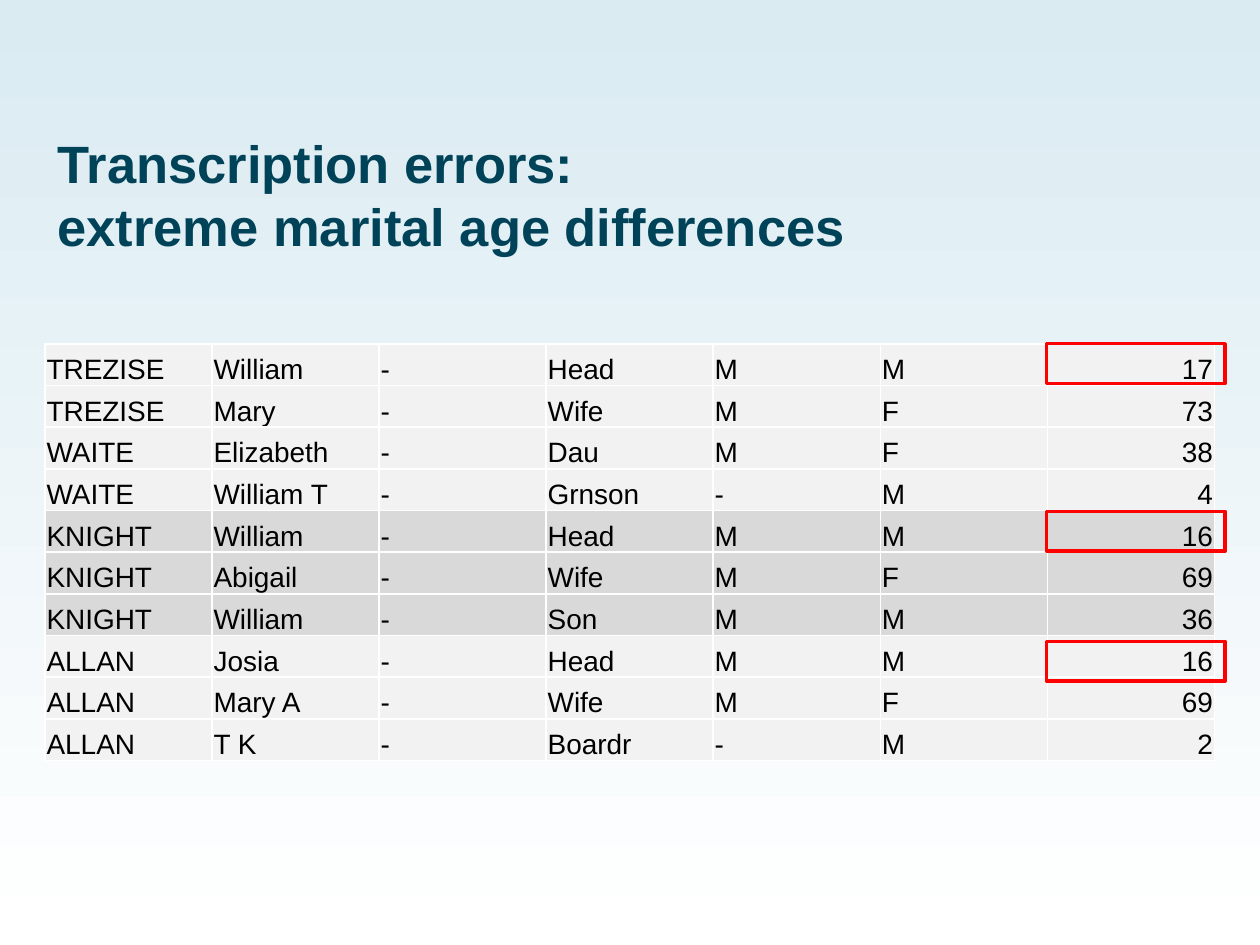
"""Build a slide listing transcription errors behind extreme marital age differences."""
from lxml.etree import fromstring
from pptx import Presentation
from pptx.dml.color import RGBColor
from pptx.enum.shapes import MSO_SHAPE
from pptx.enum.text import MSO_ANCHOR, PP_ALIGN
from pptx.oxml.ns import nsdecls
from pptx.util import Cm, Pt

TITLE = "Transcription errors:\nextreme marital age differences"
PEOPLE = [
    ("TREZISE", "William", "-", "Head", "M", "M", "17"),
    ("TREZISE", "Mary", "-", "Wife", "M", "F", "73"),
    ("WAITE", "Elizabeth", "-", "Dau", "M", "F", "38"),
    ("WAITE", "William T", "-", "Grnson", "-", "M", "4"),
    ("KNIGHT", "William", "-", "Head", "M", "M", "16"),
    ("KNIGHT", "Abigail", "-", "Wife", "M", "F", "69"),
    ("KNIGHT", "William", "-", "Son", "M", "M", "36"),
    ("ALLAN", "Josia", "-", "Head", "M", "M", "16"),
    ("ALLAN", "Mary A", "-", "Wife", "M", "F", "69"),
    ("ALLAN", "T K", "-", "Boardr", "-", "M", "2"),
]
SHADED_FAMILY = "KNIGHT"
SUSPECT_AGE_TOPS = [6.93, 10.31, 12.93]

PALE_BLUE = RGBColor(0xDA, 0xEB, 0xF2)
WHITE = RGBColor(0xFF, 0xFF, 0xFF)
TEAL = RGBColor(0x00, 0x43, 0x59)
BLACK = RGBColor(0x00, 0x00, 0x00)
LIGHT_GREY = RGBColor(0xF2, 0xF2, 0xF2)
MID_GREY = RGBColor(0xD9, 0xD9, 0xD9)
RED = RGBColor(0xFF, 0x00, 0x00)

LEFT, WIDTH = 0.91, 23.57
TABLE_TOP, ROW_HEIGHT = 6.93, 0.84
TITLE_FONT = {"name": "Arial", "size": Pt(30), "bold": True}
CELL_FONT = {"name": "Arial", "size": Pt(16), "bold": False}
CELL_FORMAT = {
    "margin_left": Cm(0.03),
    "margin_right": Cm(0.03),
    "margin_top": Cm(0.03),
    "margin_bottom": 0,
    "vertical_anchor": MSO_ANCHOR.BOTTOM,
}


def apply(target, values):
    for name, value in values.items():
        setattr(target, name, value)


def style_text(paragraph, font_values, color):
    for run in paragraph.runs:
        apply(run.font, font_values)
        run.font.color.rgb = color


def add_borders(cell):
    properties = cell._tc.get_or_add_tcPr()
    for position, side in enumerate("LRTB"):
        properties.insert(position, fromstring(
            f'<a:ln{side} {nsdecls("a")} w="{Pt(1)}"><a:solidFill>'
            f'<a:srgbClr val="{WHITE}"/></a:solidFill></a:ln{side}>'))


def add_background(slide):
    fill = slide.background.fill
    fill.gradient()
    fill.gradient_angle = 270
    for stop, color, position in zip(fill.gradient_stops, (PALE_BLUE, WHITE), (0, 1)):
        stop.color.rgb = color
        stop.position = position


def add_title(slide):
    frame = slide.shapes.add_textbox(Cm(LEFT), Cm(2.51), Cm(WIDTH), Cm(3.61)).text_frame
    frame.word_wrap = True
    heading = frame.paragraphs[0]
    heading.text = TITLE
    heading.line_spacing = Pt(36)
    style_text(heading, TITLE_FONT, TEAL)


def add_people(slide):
    columns = len(PEOPLE[0])
    people = slide.shapes.add_table(
        len(PEOPLE), columns, Cm(LEFT), Cm(TABLE_TOP),
        Cm(WIDTH), Cm(ROW_HEIGHT * len(PEOPLE))).table
    apply(people, {"first_row": False, "horz_banding": False})
    for row, person in zip(people.rows, PEOPLE):
        row.height = Cm(ROW_HEIGHT)
        for column, (cell, entry) in enumerate(zip(row.cells, person)):
            cell.text = entry
            apply(cell, CELL_FORMAT)
            cell.fill.solid()
            cell.fill.fore_color.rgb = MID_GREY if person[0] == SHADED_FAMILY else LIGHT_GREY
            add_borders(cell)
            paragraph = cell.text_frame.paragraphs[0]
            paragraph.alignment = PP_ALIGN.RIGHT if column == columns - 1 else PP_ALIGN.LEFT
            style_text(paragraph, CELL_FONT, BLACK)


def add_age_frames(slide):
    for top in SUSPECT_AGE_TOPS:
        age_frame = slide.shapes.add_shape(
            MSO_SHAPE.RECTANGLE, Cm(21.1), Cm(top), Cm(3.6), Cm(0.8))
        age_frame.shadow.inherit = False
        age_frame.fill.background()
        age_frame.line.color.rgb = RED
        age_frame.line.width = Pt(2)


def main():
    deck = Presentation()
    apply(deck, {"slide_width": Cm(25.4), "slide_height": Cm(19.05)})
    slide = deck.slides.add_slide(deck.slide_layouts[6])
    for add_part in (add_background, add_title, add_people, add_age_frames):
        add_part(slide)
    deck.save("out.pptx")


if __name__ == "__main__":
    main()
